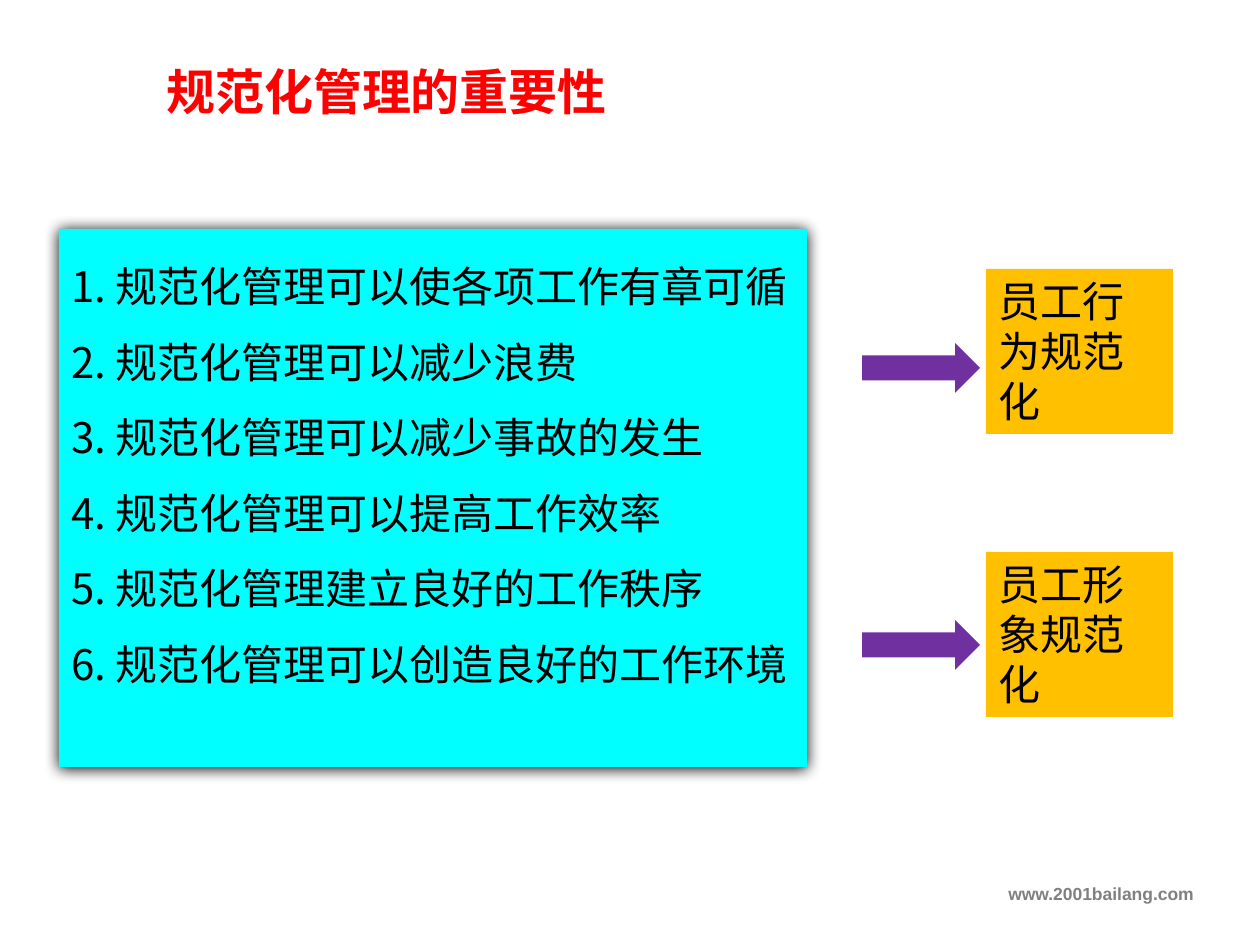
from dataclasses import dataclass

from lxml.etree import SubElement
from pptx import Presentation
from pptx.dml.color import RGBColor
from pptx.enum.shapes import MSO_SHAPE as Shape
from pptx.enum.text import MSO_ANCHOR as Anchor, PP_ALIGN as Align
from pptx.oxml.ns import qn
from pptx.util import Emu, Pt

PX = 914400 / 126
CJK = "Noto Sans CJK SC"
REASONS = [
    "规范化管理可以使各项工作有章可循",
    "规范化管理可以减少浪费",
    "规范化管理可以减少事故的发生",
    "规范化管理可以提高工作效率",
    "规范化管理建立良好的工作秩序",
    "规范化管理可以创造良好的工作环境",
]


@dataclass
class Area:
    left: int
    top: int
    width: int
    height: int

    def emu(self) -> list[Emu]:
        return [px(n) for n in (self.left, self.top, self.width, self.height)]


@dataclass
class Outcome:
    label: str
    box_top: int
    arrow_top: int


OUTCOMES = [Outcome("员工行为规范化", 269, 343), Outcome("员工形象规范化", 552, 620)]


def px(length: int) -> Emu:
    return Emu(round(length * PX))


def color(value: str) -> RGBColor:
    return RGBColor.from_string(value)


def write(shape, lines: list[str], size: int, ink: str, font: str = "Arial",
          bold: bool = False, align: Align = Align.LEFT) -> None:
    frame = shape.text_frame
    frame.text = "\n".join(lines)
    frame.word_wrap = True
    frame.vertical_anchor = Anchor.TOP
    for paragraph in frame.paragraphs:
        paragraph.alignment = align
        for run in paragraph.runs:
            run.font.size = Pt(size)
            run.font.bold = bold
            run.font.name = font
            run.font.color.rgb = color(ink)
            SubElement(run.font._element, qn("a:ea"), typeface=CJK)


def add_block(slide, kind: Shape, area: Area, fill: str):
    block = slide.shapes.add_shape(kind, *area.emu())
    block.shadow.inherit = False
    block.fill.solid()
    block.fill.fore_color.rgb = color(fill)
    block.line.fill.background()
    return block


def add_label(slide, area: Area, text: str, **style) -> None:
    write(slide.shapes.add_textbox(*area.emu()), [text], **style)


def number_lines(shape) -> None:
    for paragraph in shape.text_frame.paragraphs:
        props = paragraph._p.get_or_add_pPr()
        props.set("marL", str(px(44)))
        props.set("indent", str(-px(44)))
        SubElement(props, qn("a:buFont"), typeface=CJK)
        SubElement(props, qn("a:buAutoNum"), type="arabicPeriod")
        paragraph.line_spacing = 1.5


def cast_shadow(shape) -> None:
    effects = shape._element.spPr.find(qn("a:effectLst"))
    shadow = SubElement(effects, qn("a:outerShdw"), blurRad=str(Pt(8.5)),
                        dist=str(Pt(1)), dir="5400000", algn="t", rotWithShape="0")
    SubElement(shadow, qn("a:srgbClr"), val="000000")


def main() -> None:
    deck = Presentation()
    deck.slide_width, deck.slide_height = px(1260), px(945)
    slide = deck.slides.add_slide(deck.slide_layouts[6])

    # Footer address and title
    add_label(slide, Area(0, 877, 1206, 44), "www.2001bailang.com",
              size=10, ink="808080", bold=True, align=Align.RIGHT)
    add_label(slide, Area(154, 55, 471, 72), "规范化管理的重要性",
              size=28, ink="FF0000", font=CJK, bold=True)

    # Numbered reasons
    reasons = add_block(slide, Shape.RECTANGLE, Area(59, 229, 748, 538), "00FFFF")
    cast_shadow(reasons)
    write(reasons, REASONS, 24, "000000")
    number_lines(reasons)

    # Arrows to the outcomes
    for outcome in OUTCOMES:
        add_block(slide, Shape.RIGHT_ARROW, Area(862, outcome.arrow_top, 118, 50), "7030A0")
    for outcome in OUTCOMES:
        box = add_block(slide, Shape.RECTANGLE, Area(986, outcome.box_top, 187, 165), "FFC000")
        write(box, [outcome.label], 24, "000000")

    deck.save("out.pptx")


if __name__ == "__main__":
    main()
